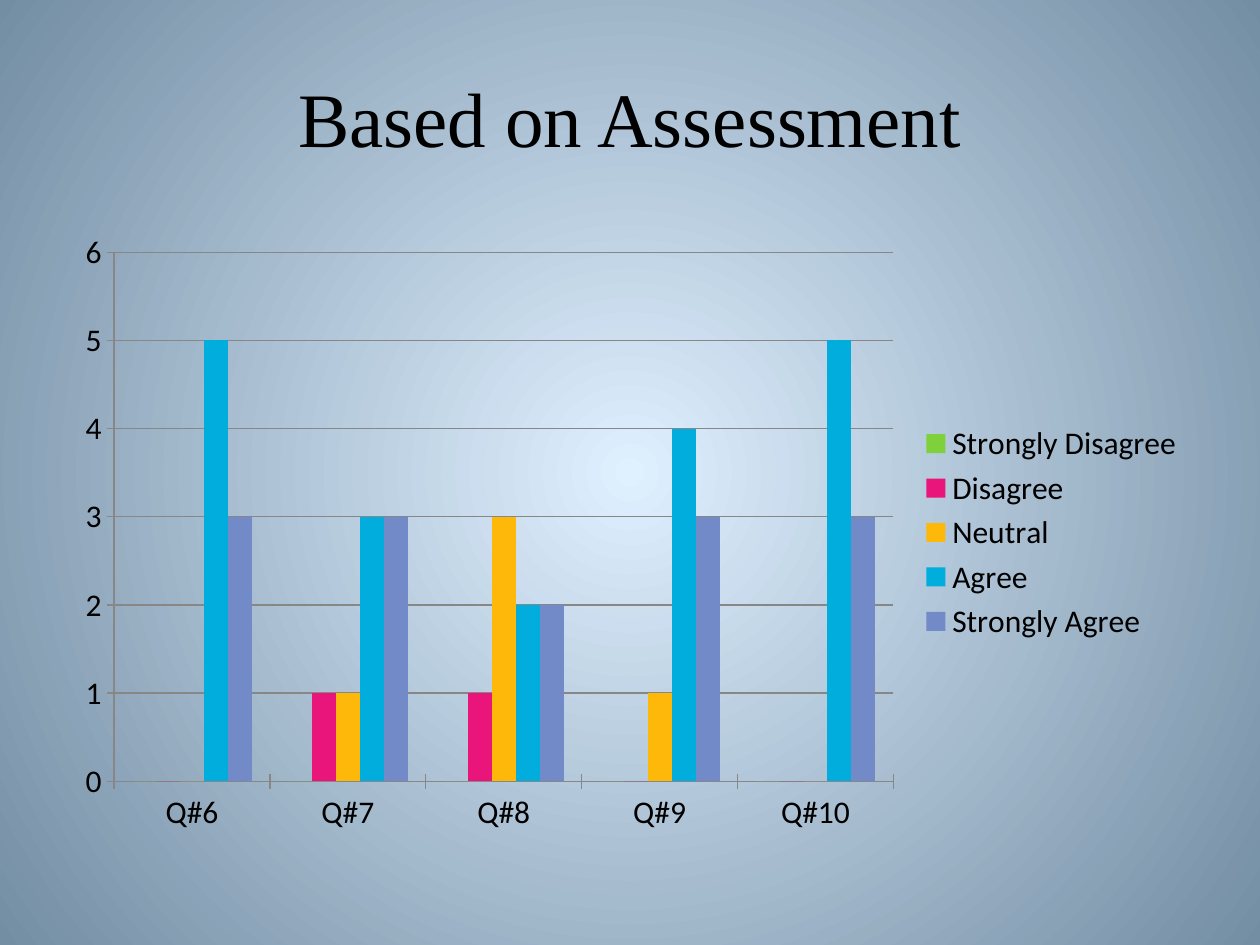
from dataclasses import dataclass

from lxml import etree
from pptx import Presentation
from pptx.chart.data import CategoryChartData
from pptx.dml.color import RGBColor
from pptx.enum.chart import XL_CHART_TYPE, XL_LEGEND_POSITION, XL_TICK_MARK
from pptx.enum.text import MSO_ANCHOR, PP_ALIGN
from pptx.oxml.ns import qn
from pptx.util import Cm, Pt

COLUMN = XL_CHART_TYPE.COLUMN_CLUSTERED
RIGHT = XL_LEGEND_POSITION.RIGHT
CROSS = XL_TICK_MARK.CROSS
NONE = XL_TICK_MARK.NONE
MIDDLE = MSO_ANCHOR.MIDDLE
CENTER = PP_ALIGN.CENTER


@dataclass(frozen=True)
class Theme:
    ink: str = "000000"
    line: str = "878787"
    glow: str = "DFF0FF"
    edge: str = "738DA3"
    head: str = "Times New Roman"
    body: str = "Calibri"
    big: int = 44
    small: int = 18


THEME = Theme()
CATS = [f"Q#{n}" for n in range(6, 11)]
SERIES = [
    ("Strongly Disagree", (0, 0, 0, 0, 0), "7FD13B"),
    ("Disagree", (0, 1, 1, 0, 0), "EA157A"),
    ("Neutral", (0, 1, 3, 1, 0), "FEB80A"),
    ("Agree", (5, 3, 2, 4, 5), "00ADDC"),
    ("Strongly Agree", (3, 3, 2, 3, 3), "738AC8"),
]


def rgb(code):
    return RGBColor.from_string(code)


def style(font, name, size):
    font.name = name
    font.size = Pt(size)
    font.color.rgb = rgb(THEME.ink)


def rule(line):
    line.color.rgb = rgb(THEME.line)
    line.width = Pt(0.75)


def paint(slide):
    fill = slide.background.fill
    fill.gradient()
    for stop, code in zip(fill.gradient_stops, (THEME.glow, THEME.edge)):
        stop.color.rgb = rgb(code)
    for spot, stop in enumerate(fill.gradient_stops):
        stop.position = spot
    grad = next(slide.element.iter(qn("a:gradFill")))
    for lin in grad.findall(qn("a:lin")):
        grad.remove(lin)
    ring = etree.SubElement(grad, qn("a:path"), path="circle")
    half = {side: "50000" for side in "ltrb"}
    etree.SubElement(ring, qn("a:fillToRect"), half)


def title(slide, box, text):
    frame = slide.shapes.add_textbox(*box).text_frame
    frame.word_wrap = True
    frame.vertical_anchor = MIDDLE
    para = frame.paragraphs[0]
    para.alignment = CENTER
    run = para.add_run()
    run.text = text
    style(run.font, THEME.head, THEME.big)


def graph(slide, box):
    data = CategoryChartData()
    data.categories = CATS
    for name, vals, _ in SERIES:
        data.add_series(name, vals)
    chart = slide.shapes.add_chart(COLUMN, *box, data).chart
    style(chart.font, THEME.body, THEME.small)
    chart.has_title = False
    chart.has_legend = True
    chart.legend.position = RIGHT
    chart.legend.include_in_layout = False

    plot = chart.plots[0]
    plot.gap_width = 150
    plot.overlap = 0
    plot.vary_by_categories = False
    for item, (_, _, code) in zip(plot.series, SERIES):
        item.format.fill.solid()
        item.format.fill.fore_color.rgb = rgb(code)

    for axis in (chart.category_axis, chart.value_axis):
        axis.major_tick_mark = CROSS
        axis.minor_tick_mark = NONE
        rule(axis.format.line)
    scale = chart.value_axis
    scale.minimum_scale = 0
    scale.maximum_scale = 6
    scale.major_unit = 1
    scale.has_major_gridlines = True
    rule(scale.major_gridlines.format.line)


def main():
    deck = Presentation()
    deck.slide_width = Cm(25.4)
    deck.slide_height = Cm(19.05)
    slide = deck.slides.add_slide(deck.slide_layouts[6])
    left, width = Cm(1.27), Cm(22.86)
    paint(slide)
    title(slide, (left, Cm(0.76), width, Cm(3.18)), "Based on Assessment")
    graph(slide, (left, Cm(4.45), width, Cm(12.57)))
    deck.save("out.pptx")


if __name__ == "__main__":
    main()
